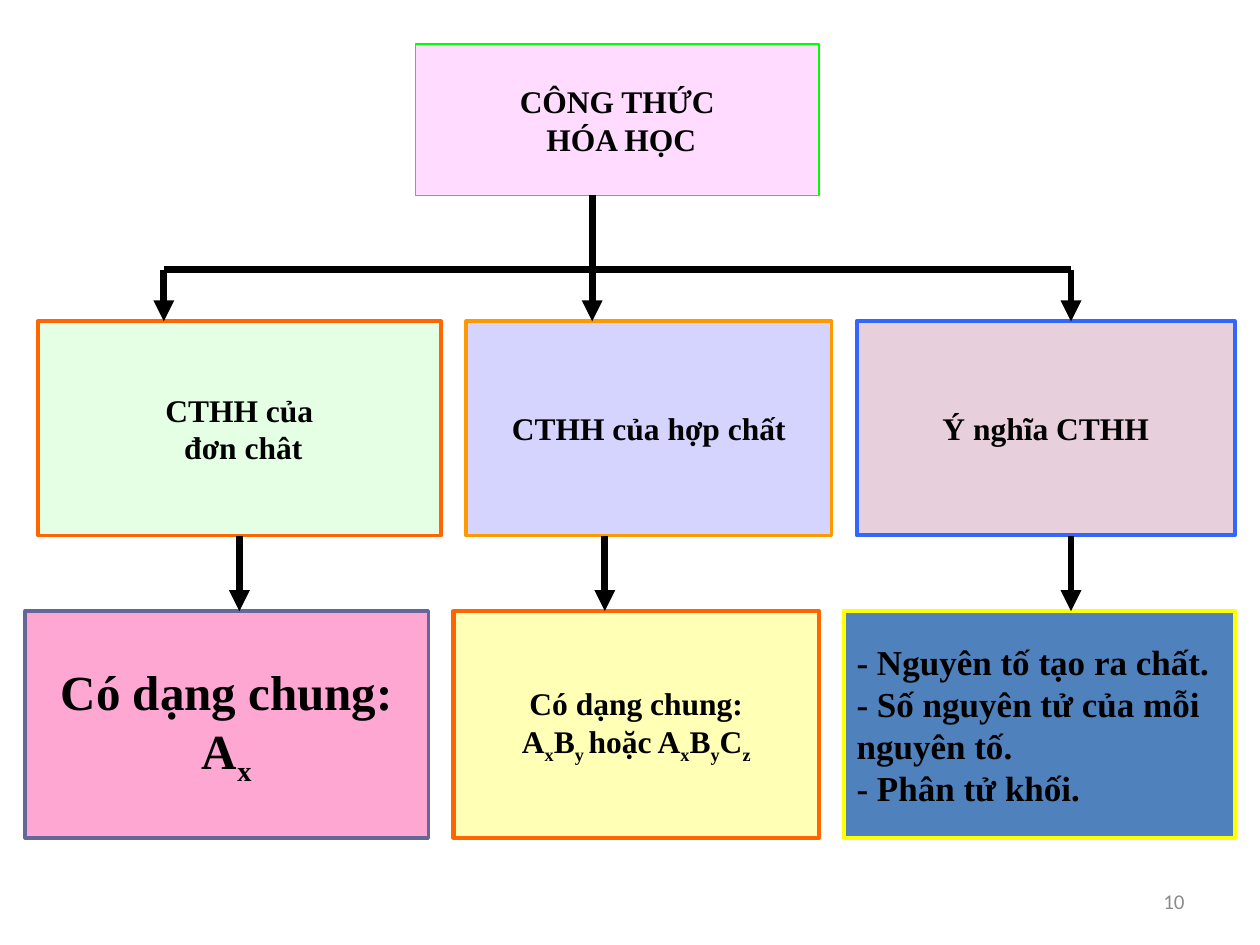
from pptx import Presentation
from pptx.dml.color import RGBColor
from pptx.enum.shapes import MSO_CONNECTOR, MSO_SHAPE
from pptx.enum.text import MSO_ANCHOR, PP_ALIGN
from pptx.oxml.ns import qn
from pptx.util import Inches, Pt
from lxml.etree import SubElement

BLACK = RGBColor(0x00, 0x00, 0x00)
GRAY = RGBColor(0x8C, 0x8C, 0x8C)
MAGENTA = RGBColor(0xFF, 0x00, 0xFF)
GREEN = RGBColor(0x00, 0xFF, 0x00)
ORANGE = RGBColor(0xFF, 0x66, 0x00)
AMBER = RGBColor(0xFF, 0x99, 0x00)
BLUE = RGBColor(0x00, 0x00, 0xFF)
SKY = RGBColor(0x33, 0x66, 0xFF)
PLUM = RGBColor(0x99, 0x33, 0x66)
PINK = RGBColor(0xFF, 0x99, 0xCC)
SLATE = RGBColor(0x66, 0x66, 0x99)
YELLOW = RGBColor(0xFF, 0xFF, 0x00)
STEEL = RGBColor(0x4F, 0x81, 0xBD)

MID_TOP, MID_HIGH = 2.55, 1.7
LOW_TOP, LOW_HIGH = 4.85, 1.8
MID_END = MID_TOP + MID_HIGH
BAR = 2.14


def write(shape, text, size=18, font="Times New Roman", color=BLACK,
          bold=True, align=PP_ALIGN.CENTER, wrap=False):
    """Write lines of text, where every second part between bars is a subscript."""
    frame = shape.text_frame
    frame.word_wrap = wrap
    frame.vertical_anchor = MSO_ANCHOR.MIDDLE
    for row, line in enumerate(text.split("\n")):
        para = frame.add_paragraph() if row else frame.paragraphs[0]
        para.alignment = align
        for spot, part in enumerate(line.split("|")):
            if not part:
                continue
            run = para.add_run()
            run.text = part
            run.font.size = Pt(size)
            run.font.name = font
            run.font.bold = bold
            run.font.color.rgb = color
            if spot % 2:
                run._r.get_or_add_rPr().set("baseline", "-25000")


def add_box(slide, place, fill, edge, text, alpha=100, width=2, **form):
    """Add a filled and outlined rectangle with text."""
    box = slide.shapes.add_shape(MSO_SHAPE.RECTANGLE, *map(Inches, place))
    box.shadow.inherit = False
    box.fill.solid()
    box.fill.fore_color.rgb = fill
    if alpha < 100:
        tint = box._element.spPr.find(qn("a:solidFill"))[0]
        SubElement(tint, qn("a:alpha")).set("val", str(alpha * 1000))
    box.line.color.rgb = edge
    box.line.width = Pt(width)
    write(box, text, **form)
    return box


def add_line(slide, start, end, arrow=True):
    """Add a thick black line, with an arrowhead at its end if wanted."""
    line = slide.shapes.add_connector(
        MSO_CONNECTOR.STRAIGHT, *map(Inches, start + end))
    line.line.color.rgb = BLACK
    line.line.width = Pt(4)
    if arrow:
        SubElement(line.line._get_or_add_ln(), qn("a:tailEnd")).set("type", "triangle")
    SubElement(line._element.spPr, qn("a:effectLst"))
    return line


def add_tree(slide):
    """Add the lines from the top box to the three middle boxes."""
    for x in (8.5, 1.3, 4.7):
        add_line(slide, (x, BAR), (x, MID_TOP))
    add_line(slide, (4.7, 1.55), (4.7, BAR), arrow=False)
    add_line(slide, (1.3, BAR), (8.5, BAR), arrow=False)


def main():
    """Build the slide and save it."""
    deck = Presentation()
    deck.slide_width, deck.slide_height = Inches(10), Inches(7.5)
    slide = deck.slides.add_slide(deck.slide_layouts[6])

    number = slide.shapes.add_textbox(*map(Inches, (7.17, 6.95, 2.33, 0.4)))
    write(number, "10", size=12, font="Calibri", color=GRAY, bold=False,
          align=PP_ALIGN.RIGHT, wrap=True)

    add_box(slide, (3.3, 0.35, 3.2, 1.2), MAGENTA, GREEN,
            "CÔNG THỨC\n HÓA HỌC", alpha=14, width=0.75)
    simple = add_box(slide, (0.3, MID_TOP, 3.2, MID_HIGH), GREEN, ORANGE,
                     "CTHH của\n đơn chât", alpha=10)
    add_box(slide, (3.7, MID_TOP, 2.9, MID_HIGH), BLUE, AMBER,
            "CTHH của hợp chất", alpha=17)
    add_box(slide, (6.8, MID_TOP, 3, MID_HIGH), PLUM, SKY,
            "Ý nghĩa CTHH", alpha=23, width=2.25)
    add_tree(slide)

    add_box(slide, (0.2, LOW_TOP, 3.2, LOW_HIGH), PINK, SLATE,
            "Có dạng chung:\nA|x|", alpha=86, size=28)
    add_box(slide, (3.6, LOW_TOP, 2.9, LOW_HIGH), YELLOW, ORANGE,
            "Có dạng chung:\nA|x|B|y |hoặc A|x|B|y|C|z|", alpha=29, width=2.5)
    add_box(slide, (6.7, LOW_TOP, 3.1, LOW_HIGH), STEEL, YELLOW,
            "- Nguyên tố tạo ra chất.\n- Số nguyên tử của mỗi\n"
            "nguyên tố.\n- Phân tử khối.",
            width=2.25, size=20, align=PP_ALIGN.LEFT)

    drops = [add_line(slide, (x, MID_END), (x, LOW_TOP)) for x in (1.9, 4.8, 8.5)]
    drops[0].begin_connect(simple, 2)

    deck.save("out.pptx")


if __name__ == "__main__":
    main()
